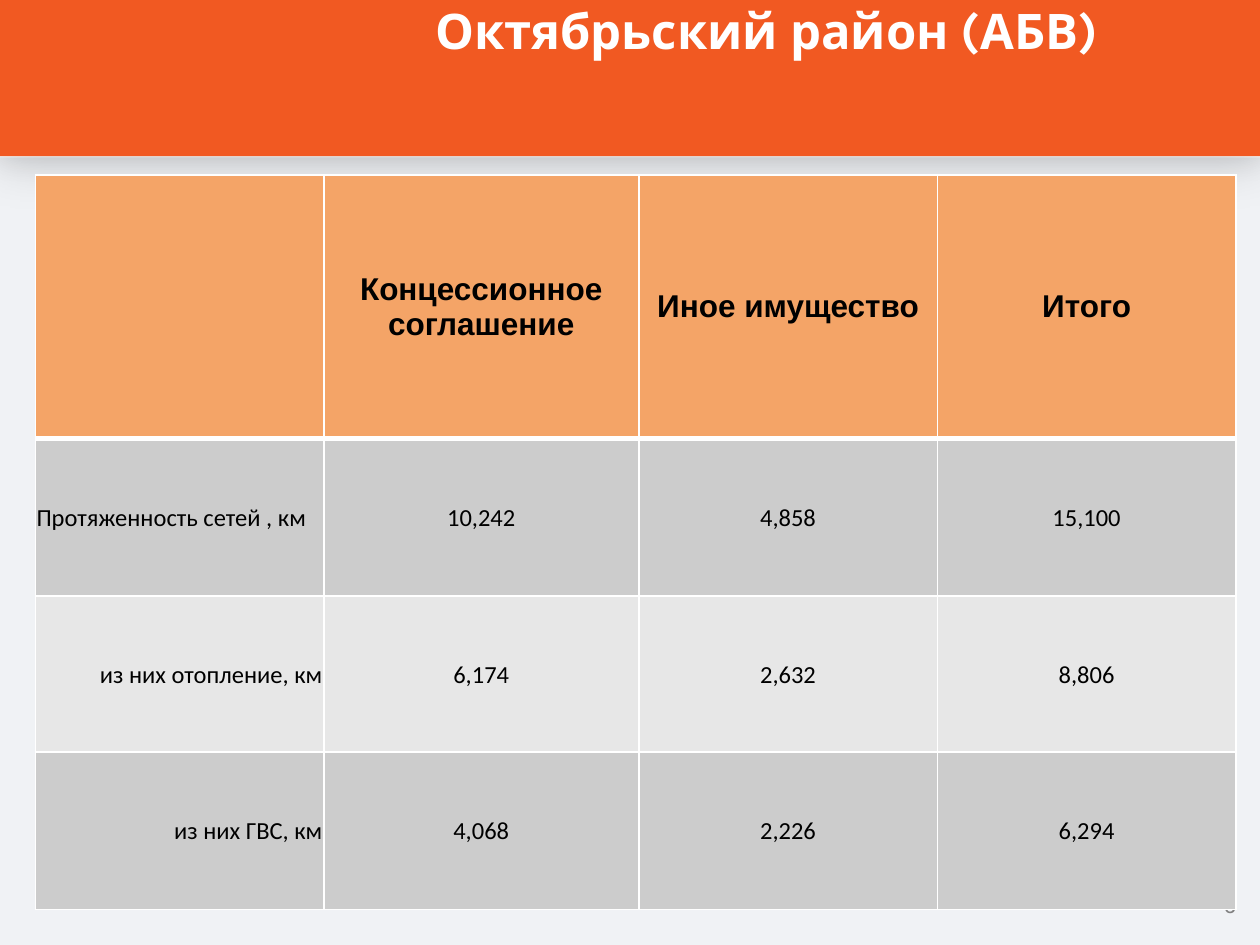
from dataclasses import dataclass
from typing import Optional

from lxml import etree
from pptx import Presentation
from pptx import util as u
from pptx.dml.color import RGBColor
from pptx.enum import shapes, text
from pptx.oxml import ns

COLORS = {
    "page": "F0F2F5", "white": "FFFFFF", "black": "000000", "orange": "F15922",
    "header": "F4A467", "dark_row": "CCCCCC", "light_row": "E7E7E7", "number": "808080",
}
LEFT, CENTER, RIGHT = text.PP_ALIGN.LEFT, text.PP_ALIGN.CENTER, text.PP_ALIGN.RIGHT


@dataclass
class Shadow:
    alpha: int  # percent
    blur: float  # points
    distance: float  # points


@dataclass
class Band:
    top: float
    height: float
    color: str
    shadow: Optional[Shadow] = None


@dataclass
class TextStyle:
    name: str
    size: float
    color: str
    bold: bool = False


BANDS = [
    Band(0, 7.5, "page"),
    Band(-0.01, 1.26, "white", Shadow(8, 15, 1)),
    Band(-0.02, 1.26, "orange", Shadow(17, 29, 3)),
]
TITLE_STYLE = TextStyle("Karla", 28, "white", True)
NUMBER_STYLE = TextStyle("Arial", 13, "number")
HEADER_STYLE = TextStyle("Arial", 18, "black", True)
BODY_STYLE = TextStyle("Calibri", 14, "black")

COLUMN_WIDTHS = [2.29, 2.5, 2.37, 2.37]
ROW_HEIGHTS = [2.09, 1.25, 1.24, 1.25]
ROWS = [
    ["", "Концессионное соглашение", "Иное имущество", "Итого"],
    ["Протяженность сетей , км", "10,242", "4,858", "15,100"],
    ["из них отопление, км", "6,174", "2,632", "8,806"],
    ["из них ГВС, км", "4,068", "2,226", "6,294"],
]


def rgb(color: str) -> RGBColor:
    return RGBColor.from_string(COLORS[color])


def add_child(parent, tag: str, **attributes):
    return etree.SubElement(parent, ns.qn(tag), {k: str(v) for k, v in attributes.items()})


def write(frame, words: str, style: TextStyle, align) -> None:
    para = frame.paragraphs[0]
    para.alignment = align
    span = para.add_run()
    span.text = words
    values = {"name": style.name, "size": u.Pt(style.size), "bold": style.bold}
    for key, value in values.items():
        setattr(span.font, key, value)
    span.font.color.rgb = rgb(style.color)


def set_frame(frame, **values) -> None:
    margins = dict.fromkeys(("margin_left", "margin_top", "margin_right", "margin_bottom"), 0)
    for key, value in {**margins, "word_wrap": True, **values}.items():
        setattr(frame, key, value)


def add_band(page, band: Band):
    box = page.shapes.add_shape(shapes.MSO_SHAPE.RECTANGLE, u.Inches(-0.01),
                                u.Inches(band.top), u.Inches(10.02), u.Inches(band.height))
    box.fill.solid()
    box.fill.fore_color.rgb = rgb(band.color)
    box.line.fill.background()
    box.shadow.inherit = False
    if band.shadow:
        effects = box.element.spPr.find(ns.qn("a:effectLst"))
        outer = add_child(effects, "a:outerShdw", blurRad=u.Pt(band.shadow.blur),
                          dist=u.Pt(band.shadow.distance), dir=90 * 60000, rotWithShape=0)
        color = add_child(outer, "a:srgbClr", val=COLORS["black"])
        add_child(color, "a:alpha", val=band.shadow.alpha * 1000)
    return box


def set_borders(cell, widths: dict[str, float]) -> None:
    properties = cell._tc.get_or_add_tcPr()
    for index, (side, width) in enumerate(widths.items()):
        line = etree.Element(ns.qn(f"a:ln{side}"), w=str(u.Pt(width)))
        add_child(add_child(line, "a:solidFill"), "a:srgbClr", val=COLORS["white"])
        properties.insert(index, line)


def add_network_table(page) -> None:
    table = page.shapes.add_table(
        len(ROWS), len(COLUMN_WIDTHS), u.Inches(0.28), u.Inches(1.39),
        u.Inches(sum(COLUMN_WIDTHS)), u.Inches(sum(ROW_HEIGHTS))).table
    for column, width in zip(table.columns, COLUMN_WIDTHS):
        column.width = u.Inches(width)
    for r, (row, height) in enumerate(zip(ROWS, ROW_HEIGHTS)):
        table.rows[r].height = u.Inches(height)
        fill = "header" if r == 0 else "dark_row" if r % 2 else "light_row"
        for c, words in enumerate(row):
            cell = table.cell(r, c)
            cell.vertical_anchor = text.MSO_ANCHOR.MIDDLE
            cell.fill.solid()
            cell.fill.fore_color.rgb = rgb(fill)
            if r:
                cell.margin_left = cell.margin_right = cell.margin_top = u.Inches(0.01)
                cell.margin_bottom = 0
            # Row labels: the total is on the left, its parts on the right
            align = CENTER if c or r == 0 else LEFT if r == 1 else RIGHT
            if words:
                write(cell.text_frame, words, BODY_STYLE if r else HEADER_STYLE, align)
            set_borders(cell, {"L": 1, "R": 1, "T": 3 if r == 1 else 1, "B": 1 if r else 3})


def main() -> None:
    deck = Presentation()
    deck.slide_width, deck.slide_height = u.Inches(10), u.Inches(7.5)
    page = deck.slides.add_slide(deck.slide_layouts[5])

    # Page colour and heading bands
    for band in BANDS:
        last_band = add_band(page, band)

    # Slide number
    number = page.shapes.add_textbox(u.Inches(9.32), u.Inches(7.07), u.Inches(0.49), u.Inches(0.22))
    set_frame(number.text_frame)
    write(number.text_frame, "6", NUMBER_STYLE, RIGHT)

    # Title, brought in front of the bands
    title = page.shapes.title
    last_band.element.addnext(title.element)
    title.left, title.top = u.Inches(2.17), 0
    title.width, title.height = u.Inches(7.83), u.Inches(1.23)
    set_frame(title.text_frame, auto_size=text.MSO_AUTO_SIZE.NONE,
              vertical_anchor=text.MSO_ANCHOR.TOP)
    write(title.text_frame, "Октябрьский район (АБВ)", TITLE_STYLE, CENTER)

    # Network lengths
    add_network_table(page)
    deck.save("out.pptx")


if __name__ == "__main__":
    main()
